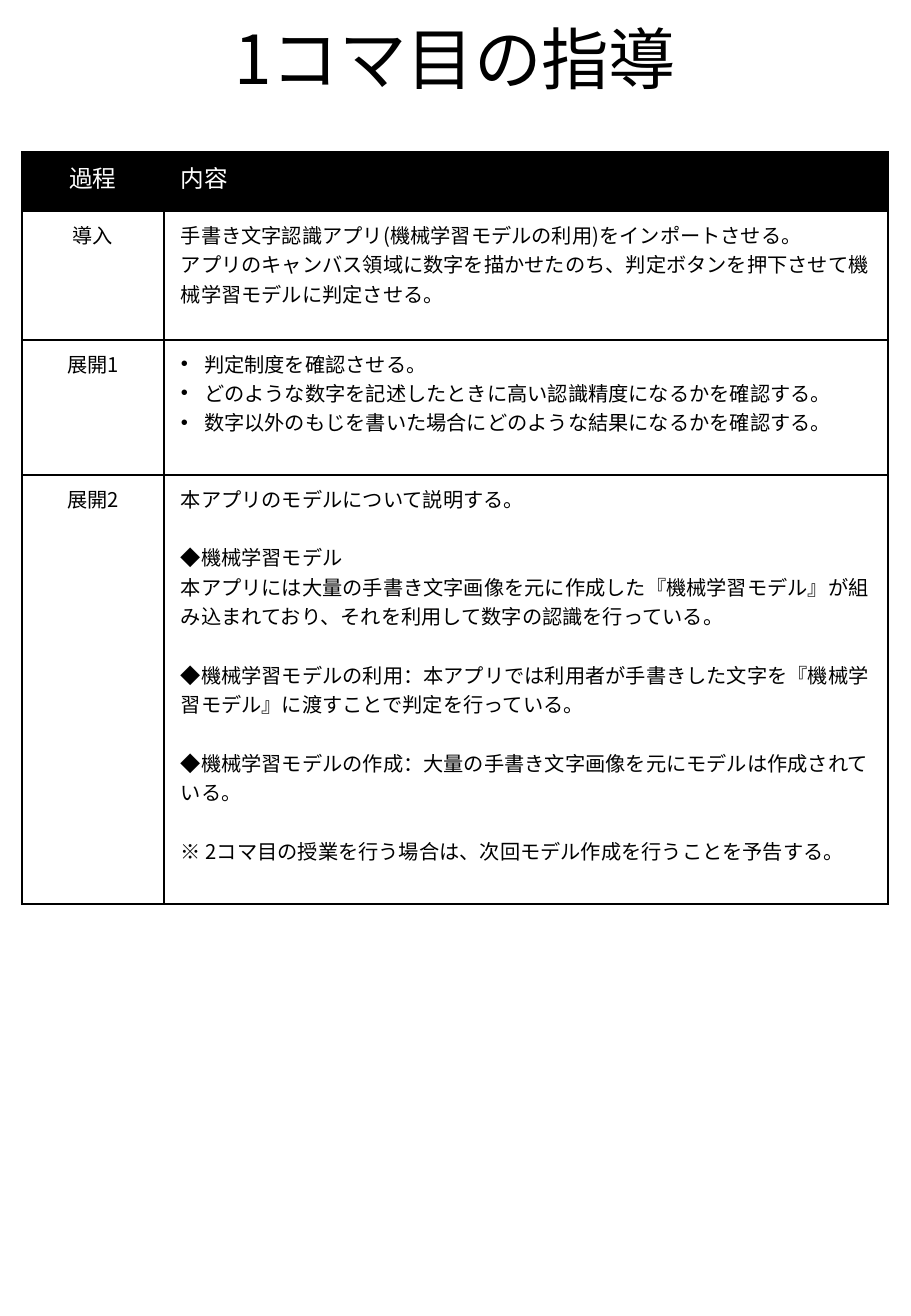
from lxml import etree
from pptx import Presentation
from pptx.dml.color import RGBColor
from pptx.enum import text
from pptx.oxml import ns
from pptx.util import Inches, Pt

FONT = "Noto Sans CJK JP"
BLACK, WHITE = "000000", "FFFFFF"
BODY_SIZE = 12
BLANK_LINE = 17.4
BULLET, GAP = "•", "gap"

# Each row: height, process, content paragraphs as (style, wording).
ROWS = [
    (0.49, "過程", [("", "内容")]),
    (1.06, "導入", [
        ("", "手書き文字認識アプリ(機械学習モデルの利用)をインポートさせる。"),
        ("", "アプリのキャンバス領域に数字を描かせたのち、判定ボタンを押下させて機械学習モデルに判定させる。"),
    ]),
    (1.11, "展開1", [
        (BULLET, "判定制度を確認させる。"),
        (BULLET, "どのような数字を記述したときに高い認識精度になるかを確認する。"),
        (BULLET, "数字以外のもじを書いた場合にどのような結果になるかを確認する。"),
    ]),
    (3.53, "展開2", [
        ("", "本アプリのモデルについて説明する。"),
        (GAP, "◆機械学習モデル"),
        ("", "本アプリには大量の手書き文字画像を元に作成した『機械学習モデル』が組み込まれており、"
             "それを利用して数字の認識を行っている。"),
        (GAP, "◆機械学習モデルの利用：本アプリでは利用者が手書きした文字を『機械学習モデル』に渡すことで判定を行っている。"),
        (GAP, "◆機械学習モデルの作成：大量の手書き文字画像を元にモデルは作成されている。"),
        (GAP, "※ 2コマ目の授業を行う場合は、次回モデル作成を行うことを予告する。"),
    ]),
]


def rgb(value):
    return RGBColor.from_string(value)


def add_element(parent, tag, **attributes):
    return etree.SubElement(parent, ns.qn(tag), attributes)


def format_runs(paragraph, size, color):
    for run in paragraph.runs:
        run.font.size = Pt(size)
        run.font.bold = False
        run.font.name = FONT
        run.font.color.rgb = rgb(color)
        add_element(run.font._element, "a:ea", typeface=FONT)


def set_bullet(paragraph):
    properties = paragraph._p.get_or_add_pPr()
    indent = Inches(0.19)
    properties.set("marL", str(indent))
    properties.set("indent", str(-indent))
    add_element(properties, "a:buFont", typeface="Arial")
    add_element(properties, "a:buChar", char=BULLET)


def set_borders(cell):
    """Draw a thin black line on all four sides of the cell."""
    properties = cell._tc.get_or_add_tcPr()
    for position, side in enumerate("LRTB"):
        line = etree.Element(ns.qn(f"a:ln{side}"), w=str(Pt(1)))
        fill = add_element(line, "a:solidFill")
        add_element(fill, "a:srgbClr", val=BLACK)
        properties.insert(position, line)


def fill_cell(cell, entries, is_header, alignment):
    cell.fill.solid()
    cell.fill.fore_color.rgb = rgb(BLACK if is_header else WHITE)
    set_borders(cell)
    cell.margin_left = cell.margin_right = Inches(0.14)
    cell.margin_top = cell.margin_bottom = Inches(0.07)
    cell.vertical_anchor = text.MSO_ANCHOR.TOP
    cell.text_frame.text = "\n".join(wording for _, wording in entries)
    for paragraph, (style, _) in zip(cell.text_frame.paragraphs, entries):
        paragraph.alignment = alignment
        if style == GAP:
            paragraph.space_before = Pt(BLANK_LINE)
        if style == BULLET:
            set_bullet(paragraph)
        format_runs(paragraph, 14 if is_header else BODY_SIZE, WHITE if is_header else BLACK)


def add_title(slide, left, top, width, height):
    title = slide.shapes.title
    title.left, title.top = Inches(left), Inches(top)
    title.width, title.height = Inches(width), Inches(height)
    frame = title.text_frame
    frame.text = "1コマ目の指導"
    frame.word_wrap = True
    frame.auto_size = text.MSO_AUTO_SIZE.NONE
    frame.vertical_anchor = text.MSO_ANCHOR.BOTTOM
    paragraph = frame.paragraphs[0]
    paragraph.alignment = text.PP_ALIGN.CENTER
    paragraph.line_spacing = 0.9
    format_runs(paragraph, 40, BLACK)


def add_lesson_table(slide, left, top, width):
    process_width = 1.17
    height = sum(row[0] for row in ROWS)
    table = slide.shapes.add_table(len(ROWS), 2, Inches(left), Inches(top),
                                   Inches(width), Inches(height)).table
    table.horz_banding = False
    table.columns[0].width = Inches(process_width)
    table.columns[1].width = Inches(width - process_width)
    for index, (row_height, process, content) in enumerate(ROWS):
        table.rows[index].height = Inches(row_height)
        is_header = index == 0
        fill_cell(table.cell(index, 0), [("", process)], is_header, text.PP_ALIGN.CENTER)
        fill_cell(table.cell(index, 1), content, is_header, text.PP_ALIGN.LEFT)


def main():
    presentation = Presentation()
    presentation.slide_width, presentation.slide_height = Inches(7.5), Inches(10.83)
    slide = presentation.slides.add_slide(presentation.slide_layouts[5])
    add_title(slide, 0.56, 0.06, 6.38, 0.81)
    add_lesson_table(slide, 0.18, 1.25, 7.13)
    presentation.save("out.pptx")


if __name__ == "__main__":
    main()
